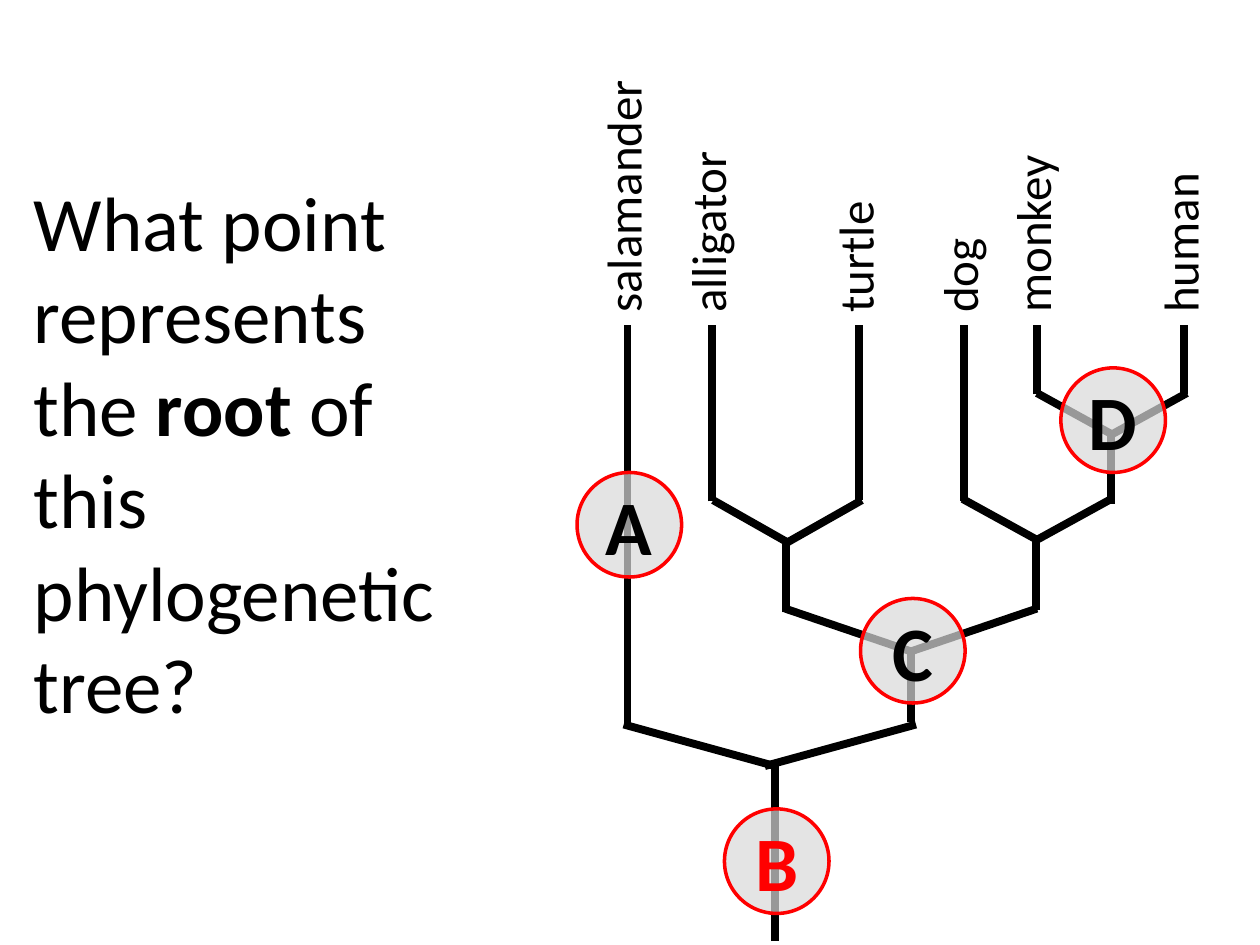
from lxml import etree
from pptx import Presentation
from pptx.dml.color import RGBColor
from pptx.enum import shapes, text
from pptx.oxml.ns import qn
from pptx.util import Inches, Pt

BLACK, RED, GREY = "000000", "FF0000", "D9D9D9"
TIP_Y = 2.58
LABEL_LENGTH, LABEL_HEIGHT, LABEL_MIDDLE = 2.33, 0.57, 1.415
MARKER_SIZE = 0.83

# name, x of the branch tip, y where the branch starts
SPECIES = [
    ("salamander", 4.98, 5.77),
    ("alligator", 5.65, 3.98),
    ("turtle", 6.82, 3.97),
    ("dog", 7.65, 3.98),
    ("monkey", 8.23, 3.13),
    ("human", 9.4, 3.13),
]

# stem x, left arm x, right arm x, joint y, arm span, arm rise, stem foot y
FORKS = [
    (6.15, 6.15, 6.07, 6.08, 1.2, 0.33, 7.47),
    (7.23, 7.23, 7.23, 5.17, 1.0, 0.34, 5.73),
    (6.24, 6.26, 6.24, 4.31, 0.6, 0.34, 4.86),
    (8.22, 8.24, 8.22, 4.29, 0.6, 0.33, 4.84),
    (8.82, 8.83, 8.82, 3.45, 0.6, 0.33, 4.0),
]

# letter, left, top, letter colour
MARKERS = [
    ("A", 4.58, 3.75, BLACK),
    ("B", 5.75, 6.42, RED),
    ("C", 6.83, 4.75, BLACK),
    ("D", 8.42, 2.92, BLACK),
]


def color(value):
    return RGBColor.from_string(value)


def add_span(para, words, size, shade=BLACK, bold=False):
    span = para.add_run()
    span.text = words
    formats = {"name": "Calibri", "size": Pt(size), "bold": bold}
    for key, value in formats.items():
        setattr(span.font, key, value)
    span.font.color.rgb = color(shade)


def add_box(page, left, top, width, height):
    box = page.shapes.add_textbox(*map(Inches, (left, top, width, height)))
    box.text_frame.word_wrap = True
    return box


def add_question(page):
    frame = add_box(page, 0.17, 0.5, 3.58, 6.17).text_frame
    frame.vertical_anchor = text.MSO_ANCHOR.MIDDLE
    para = frame.paragraphs[0]
    add_span(para, "What point represents the ", 44)
    add_span(para, "root ", 44, bold=True)
    add_span(para, "of this phylogenetic tree?", 44)


def add_branch(page, *ends):
    branch = page.shapes.add_connector(
        shapes.MSO_CONNECTOR.STRAIGHT, *map(Inches, ends))
    branch.line.color.rgb = color(BLACK)
    branch.line.width = Pt(4.5)
    etree.SubElement(branch._element.spPr, qn("a:effectLst"))


def add_fork(page, stem, left, right, joint, span, rise, foot):
    add_branch(page, stem, foot, stem, joint)
    add_branch(page, left, joint, left - span, joint - rise)
    add_branch(page, right, joint, right + span, joint - rise)


def add_species(page, name, x, start):
    add_branch(page, x, start, x, TIP_Y)
    label = add_box(page, x - 0.04 - LABEL_LENGTH / 2,
                    LABEL_MIDDLE - LABEL_HEIGHT / 2,
                    LABEL_LENGTH, LABEL_HEIGHT)
    label.rotation = 270
    add_span(label.text_frame.paragraphs[0], name, 28)


def add_marker(page, letter, left, top, shade):
    marker = page.shapes.add_shape(
        shapes.MSO_SHAPE.OVAL,
        *map(Inches, (left, top, MARKER_SIZE, MARKER_SIZE)))
    marker.shadow.inherit = False
    marker.line.color.rgb = color(RED)
    marker.line.width = Pt(2)
    marker.fill.solid()
    marker.fill.fore_color.rgb = color(GREY)
    # Let the branches show through
    fill = marker._element.spPr.find(qn("a:solidFill"))
    etree.SubElement(fill[0], qn("a:alpha"), val="70000")
    frame = marker.text_frame
    frame.vertical_anchor = text.MSO_ANCHOR.MIDDLE
    para = frame.paragraphs[0]
    para.alignment = text.PP_ALIGN.CENTER
    add_span(para, letter, 44, shade, bold=True)


def main():
    deck = Presentation()
    deck.slide_width, deck.slide_height = Inches(10), Inches(7.5)
    page = deck.slides.add_slide(deck.slide_layouts[6])

    add_question(page)

    # Tree
    for fork in FORKS:
        add_fork(page, *fork)
    for species in SPECIES:
        add_species(page, *species)

    # Answer choices
    for marker in MARKERS:
        add_marker(page, *marker)

    deck.save("out.pptx")


if __name__ == "__main__":
    main()
